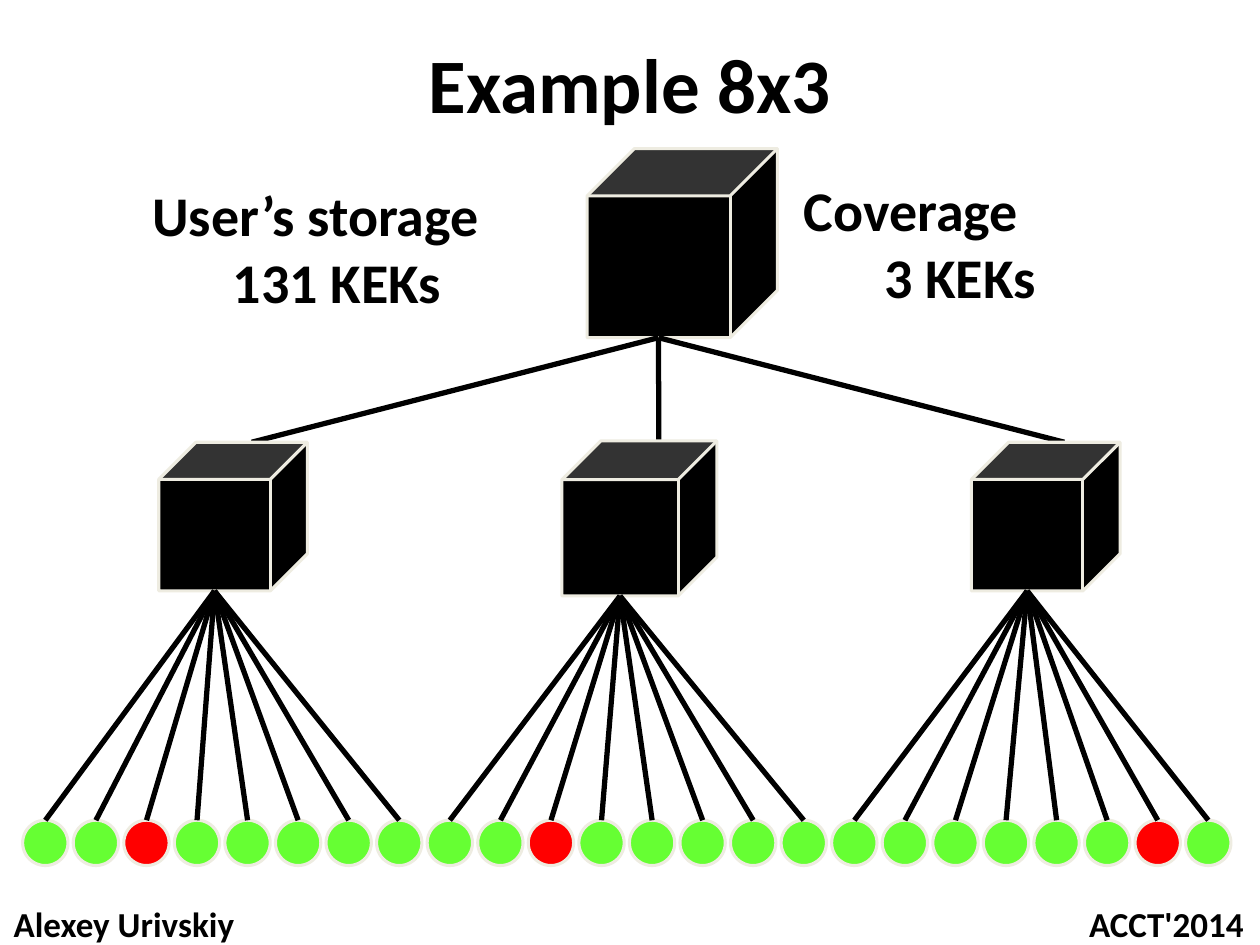
import pptx
import pptx.util
import pptx.dml.color
import pptx.enum.shapes
import pptx.enum.text
import pptx.oxml.ns
from lxml import etree

Inches, Pt = pptx.util.Inches, pptx.util.Pt
SHAPE = pptx.enum.shapes.MSO_SHAPE
ALIGN = pptx.enum.text.PP_ALIGN
ANCHOR = pptx.enum.text.MSO_ANCHOR

COLORS = {"black": "000000", "outline": "EEECE1", "user": "66FF33", "revoked": "FF0000"}

# Content: cubes are (left, top, width, height)
ROOT = (4.66, 1.18, 1.51, 1.5)
NODES = [(1.26, 3.51, 1.18, 1.18), (4.46, 3.5, 1.23, 1.23), (7.71, 3.51, 1.18, 1.18)]
USERS_PER_NODE = 8
REVOKED = {2, 10, 22}
USER_LEFT, USER_TOP, USER_SIZE, USER_STEP = 0.18, 6.51, 0.36, 0.4013
CUBE_DEPTH = 0.25
# Texts: (text, box, size, alignment, anchor, hanging indent)
TEXTS = [
    ("Example 8x3", (0, 0.25, 10, 0.82), 44, ALIGN.CENTER, ANCHOR.MIDDLE, 0),
    ("User’s storage\v131 KEKs", (1.11, 1.38, 3.74, 1.18), 32, ALIGN.LEFT, ANCHOR.TOP, 0.64),
    ("Coverage\v3 KEKs", (6.28, 1.34, 3.74, 1.18), 32, ALIGN.LEFT, ANCHOR.TOP, 0.64),
    ("Alexey Urivskiy", (0.01, 7.13, 4, 0.4), 20, ALIGN.LEFT, ANCHOR.MIDDLE, 0),
    ("ACCT'2014", (5.97, 7.13, 4, 0.4), 20, ALIGN.RIGHT, ANCHOR.MIDDLE, 0),
]

prs = pptx.Presentation()
prs.slide_width, prs.slide_height = Inches(10), Inches(7.5)
s = prs.slides.add_slide(prs.slide_layouts[6])


def rgb(name):
    return pptx.dml.color.RGBColor.from_string(COLORS[name])


def add_part(kind, box, color):
    sp = s.shapes.add_shape(kind, *map(Inches, box))
    sp.shadow.inherit = False
    sp.fill.solid()
    sp.fill.fore_color.rgb = rgb(color)
    sp.line.color.rgb = rgb("outline")
    sp.line.width = Pt(1.75)
    return sp


def add_cube(box):
    add_part(SHAPE.CUBE, box, "black").adjustments[0] = CUBE_DEPTH


def add_line(start, end):
    points = map(Inches, (*start, *end))
    line = s.shapes.add_connector(pptx.enum.shapes.MSO_CONNECTOR.STRAIGHT, *points)
    line.line.color.rgb = rgb("black")
    line.line.width = Pt(3)
    etree.SubElement(line._element.spPr, pptx.oxml.ns.qn("a:effectLst"))
    return line


def cube_top(box):
    left, top, width, _ = box
    return left + width * (1 + CUBE_DEPTH) / 2, top


def cube_bottom(box):
    left, top, width, height = box
    return left + width * (1 - CUBE_DEPTH) / 2, top + height


def add_text(text, box, size, align, anchor, hang):
    tf = s.shapes.add_textbox(*map(Inches, box)).text_frame
    tf.word_wrap = True
    tf.vertical_anchor = anchor
    p = tf.paragraphs[0]
    p.text = text
    p.alignment = align
    if hang:
        pPr = p._p.get_or_add_pPr()
        pPr.set("marL", str(Inches(hang)))
        pPr.set("indent", str(-Inches(hang)))
    for r in p.runs:
        for name, value in {"name": "Calibri", "size": Pt(size), "bold": True}.items():
            setattr(r.font, name, value)
        r.font.color.rgb = rgb("black")


# Root cube and its branches
add_cube(ROOT)
for node in NODES:
    add_line(cube_bottom(ROOT), cube_top(node))

# Users in one row, each joined to its node
for n, node in enumerate(NODES):
    add_cube(node)
    for i in range(n * USERS_PER_NODE, (n + 1) * USERS_PER_NODE):
        left = USER_LEFT + i * USER_STEP
        user = add_part(SHAPE.OVAL, (left, USER_TOP, USER_SIZE, USER_SIZE),
                        "revoked" if i in REVOKED else "user")
        branch = add_line(cube_bottom(node), (left + USER_SIZE / 2, USER_TOP))
        branch.end_connect(user, 0)

# Title, captions and footer
for item in TEXTS:
    add_text(*item)

prs.save("out.pptx")
